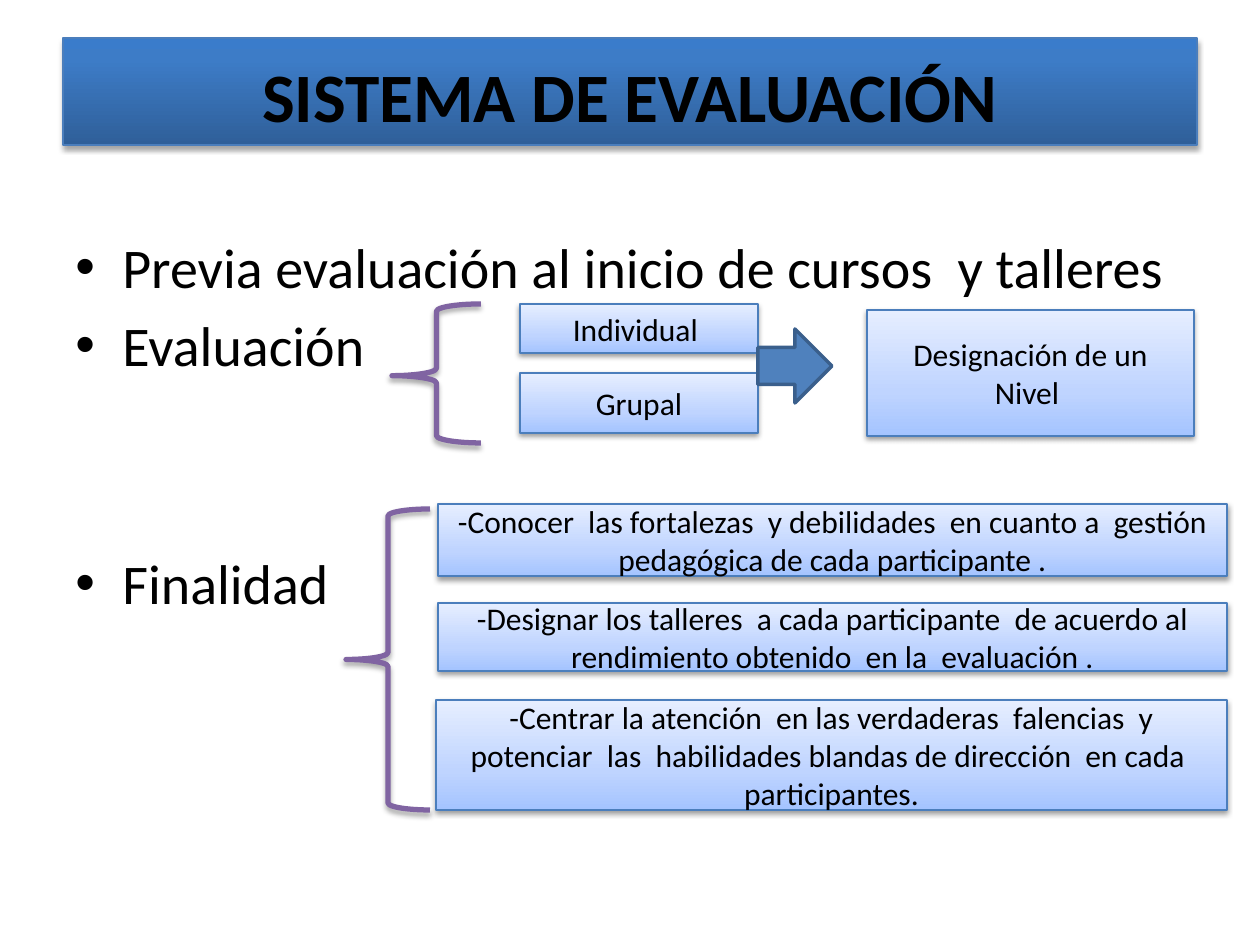
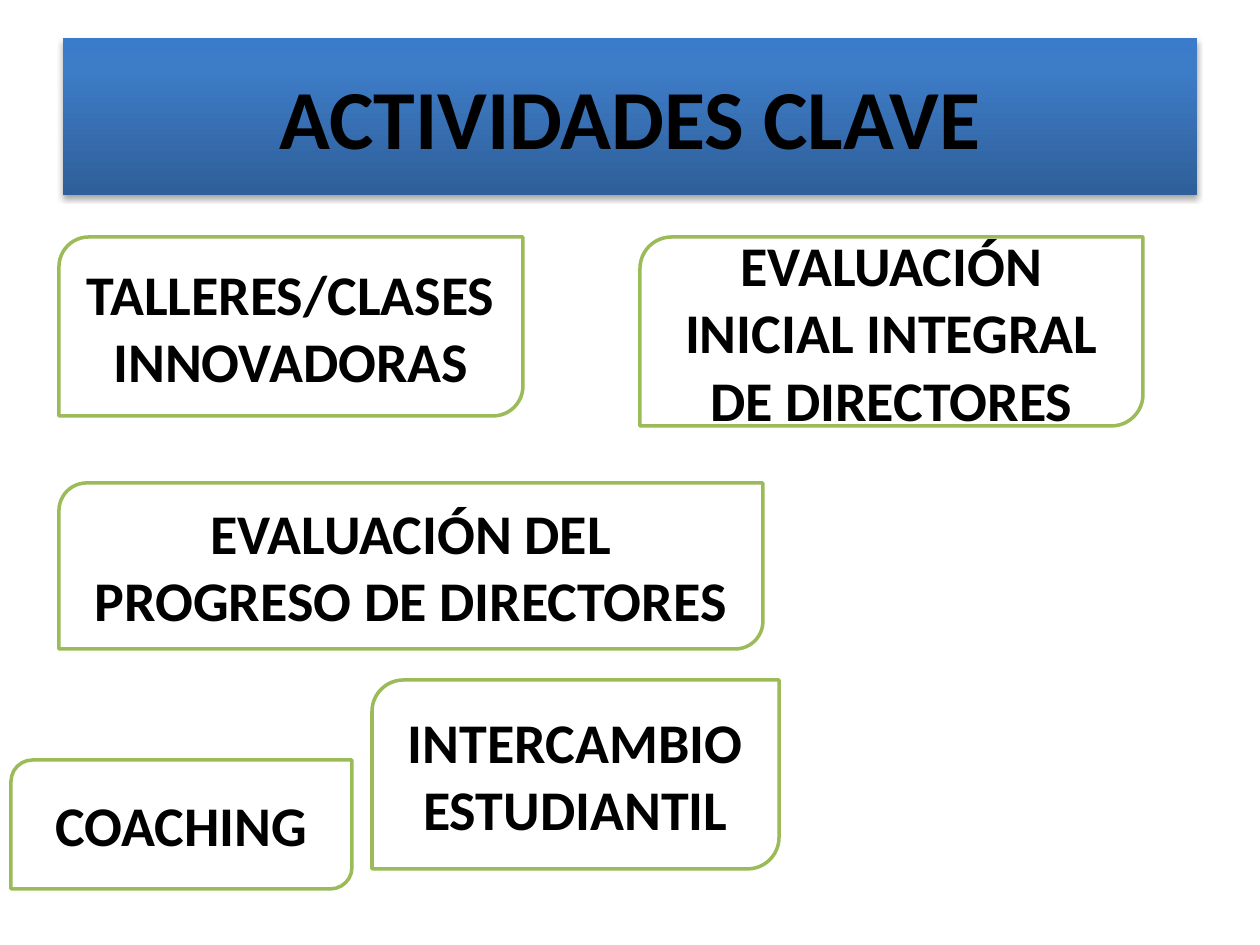
from lxml import etree
from pptx import Presentation
from pptx.dml.color import RGBColor
from pptx.enum.shapes import MSO_SHAPE
from pptx.enum.text import MSO_ANCHOR, MSO_AUTO_SIZE, PP_ALIGN
from pptx.oxml import parse_xml
from pptx.oxml.ns import nsdecls, qn
from pptx.util import Emu, Pt

RECT = MSO_SHAPE.RECTANGLE
BRACE = MSO_SHAPE.LEFT_BRACE
ARROW = MSO_SHAPE.RIGHT_ARROW
CARD = MSO_SHAPE.ROUND_2_DIAG_RECTANGLE
MIDDLE = MSO_ANCHOR.MIDDLE
CENTER = PP_ALIGN.CENTER
NO_AUTOFIT = MSO_AUTO_SIZE.NONE

PX_PER_INCH = 126
TITLE_ONLY = 5
FONT = "Calibri"
COLORS = {
    "text": "000000",
    "card": "FFFFFF",
    "card_edge": "9BBB59",
    "box_edge": "4B7EBC",
    "brace": "8064A2",
    "arrow": "4F81BD",
    "arrow_edge": "3A5F8C",
    "shadow": "000000",
}
# Stops run from the bottom edge to the top edge.
TITLE_GRADIENT = [(0, "2F5F99"), (80, "3D7CC7"), (100, "3A7CCB")]
BOX_GRADIENT = [(0, "A4C4FF"), (35, "BFD4FF"), (100, "E6EEFF")]


def px(length):
    return Emu(round(length * 914400 / PX_PER_INCH))


def color(name):
    return RGBColor.from_string(COLORS[name])


class Deck:
    def __init__(self):
        self.prs = Presentation()
        self.prs.slide_width, self.prs.slide_height = px(1260), px(945)
        self.slide = None

    def add_slide(self, title, height, size, edge=None, inset=6):
        self.slide = self.prs.slides.add_slide(self.prs.slide_layouts[TITLE_ONLY])
        band = self.slide.shapes.title
        band.left, band.top, band.width, band.height = map(px, (63, 38, 1134, height))
        self.gradient(band, TITLE_GRADIENT)
        self.outline(band, edge, 0.75)
        self.shadow(band, 35, 1.8)
        self.label(band, title, size, bold=True)
        band.text_frame.margin_top = px(inset)

    def gradient(self, shape, stops):
        shape.fill.gradient()
        old = shape._element.spPr.find(qn("a:gradFill"))
        marks = "".join(
            f'<a:gs pos="{position * 1000}"><a:srgbClr val="{value}"/></a:gs>'
            for position, value in stops
        )
        new = parse_xml(
            f'<a:gradFill {nsdecls("a")} rotWithShape="1"><a:gsLst>{marks}</a:gsLst>'
            '<a:lin ang="16200000" scaled="0"/></a:gradFill>'
        )
        old.getparent().replace(old, new)

    def outline(self, shape, edge, width):
        if edge is None:
            shape.line.fill.background()
        else:
            shape.line.color.rgb = color(edge)
            shape.line.width = Pt(width)

    def shadow(self, shape, opacity, distance):
        shape.shadow.inherit = False
        effects = shape._element.spPr.find(qn("a:effectLst"))
        effects.append(parse_xml(
            f'<a:outerShdw {nsdecls("a")} blurRad="{Pt(3.1)}" dist="{Pt(distance)}" '
            f'dir="5400000" rotWithShape="0"><a:srgbClr val="{COLORS["shadow"]}">'
            f'<a:alpha val="{opacity * 1000}"/></a:srgbClr></a:outerShdw>'
        ))

    def style(self, paragraph, size, bold=False):
        font = paragraph.font
        font.name, font.size, font.bold = FONT, Pt(size), bold
        font.color.rgb = color("text")

    def label(self, shape, text, size, bold=False):
        frame = shape.text_frame
        frame.text = text
        frame.word_wrap = True
        frame.auto_size = NO_AUTOFIT
        frame.vertical_anchor = MIDDLE
        paragraph = frame.paragraphs[0]
        paragraph.alignment = CENTER
        self.style(paragraph, size, bold)

    def shape(self, kind, place, edge, width):
        """Add an outlined preset shape without a shadow."""
        shape = self.slide.shapes.add_shape(kind, *map(px, place))
        shape.shadow.inherit = False
        self.outline(shape, edge, width)
        return shape

    def box(self, text, *place):
        box = self.shape(RECT, place, "box_edge", 0.75)
        self.gradient(box, BOX_GRADIENT)
        self.shadow(box, 38, 1.6)
        self.label(box, text, 18)

    def card(self, text, *place):
        card = self.shape(CARD, place, "card_edge", 2)
        card.fill.solid()
        card.fill.fore_color.rgb = color("card")
        self.label(card, text, 32, bold=True)

    def brace(self, *place, point=0.5):
        brace = self.shape(BRACE, place, "brace", 3)
        brace.fill.background()
        brace.adjustments[1] = point
        self.shadow(brace, 35, 1.8)

    def arrow(self, *place):
        arrow = self.shape(ARROW, place, "arrow_edge", 2)
        arrow.fill.solid()
        arrow.fill.fore_color.rgb = color("arrow")

    def bullets(self, items, *place):
        """Add bulleted lines from (text, points of space before) pairs."""
        frame = self.slide.shapes.add_textbox(*map(px, place)).text_frame
        frame.word_wrap = True
        for index, (text, gap) in enumerate(items):
            paragraph = frame.paragraphs[0] if index == 0 else frame.add_paragraph()
            paragraph.text = text
            properties = paragraph._p.get_or_add_pPr()
            properties.set("marL", str(px(47)))
            properties.set("indent", str(-px(47)))
            etree.SubElement(properties, qn("a:buFont"), typeface="Arial")
            etree.SubElement(properties, qn("a:buChar"), char="•")
            paragraph.space_before = Pt(gap)
            self.style(paragraph, 32)


def evaluation_system(deck):
    deck.add_slide("SISTEMA DE EVALUACIÓN", 107, 39.6, edge="box_edge", inset=12)
    deck.bullets(
        [
            ("Previa evaluación al inicio de cursos  y talleres", 0),
            ("Evaluación", 6.4),
            ("Finalidad", 97.3),
        ],
        63, 226, 1134, 618,
    )
    deck.brace(392, 304, 89, 139, point=0.516)
    deck.box("Individual ", 520, 304, 238, 49)
    deck.box("Grupal", 520, 373, 238, 60)
    deck.brace(346, 509, 84, 301)
    deck.box("-Conocer  las fortalezas  y debilidades  en cuanto a  gestión "
             "pedagógica de cada participante .", 438, 504, 789, 72)
    deck.box("-Designar los talleres  a cada participante  de acuerdo al "
             "rendimiento obtenido  en la  evaluación .", 438, 603, 789, 68)
    deck.box("-Centrar la atención  en las verdaderas  falencias  y potenciar  las  "
             "habilidades blandas de dirección  en cada  participantes.",
             436, 700, 791, 110)
    deck.arrow(758, 329, 74, 74)
    deck.box("Designación de un Nivel ", 867, 310, 327, 126)


def key_activities(deck):
    deck.add_slide("ACTIVIDADES CLAVE", 157, 48)
    deck.card("TALLERES/CLASES INNOVADORAS", 59, 237, 464, 179)
    deck.card("COACHING", 11, 760, 341, 129)
    deck.card("INTERCAMBIO ESTUDIANTIL", 372, 680, 407, 189)
    deck.card("EVALUACIÓN INICIAL INTEGRAL DE DIRECTORES", 640, 237, 503, 189)
    deck.card("EVALUACIÓN DEL PROGRESO DE DIRECTORES", 59, 483, 704, 166)


def main():
    deck = Deck()
    evaluation_system(deck)
    key_activities(deck)
    deck.prs.save("out.pptx")


if __name__ == "__main__":
    main()
